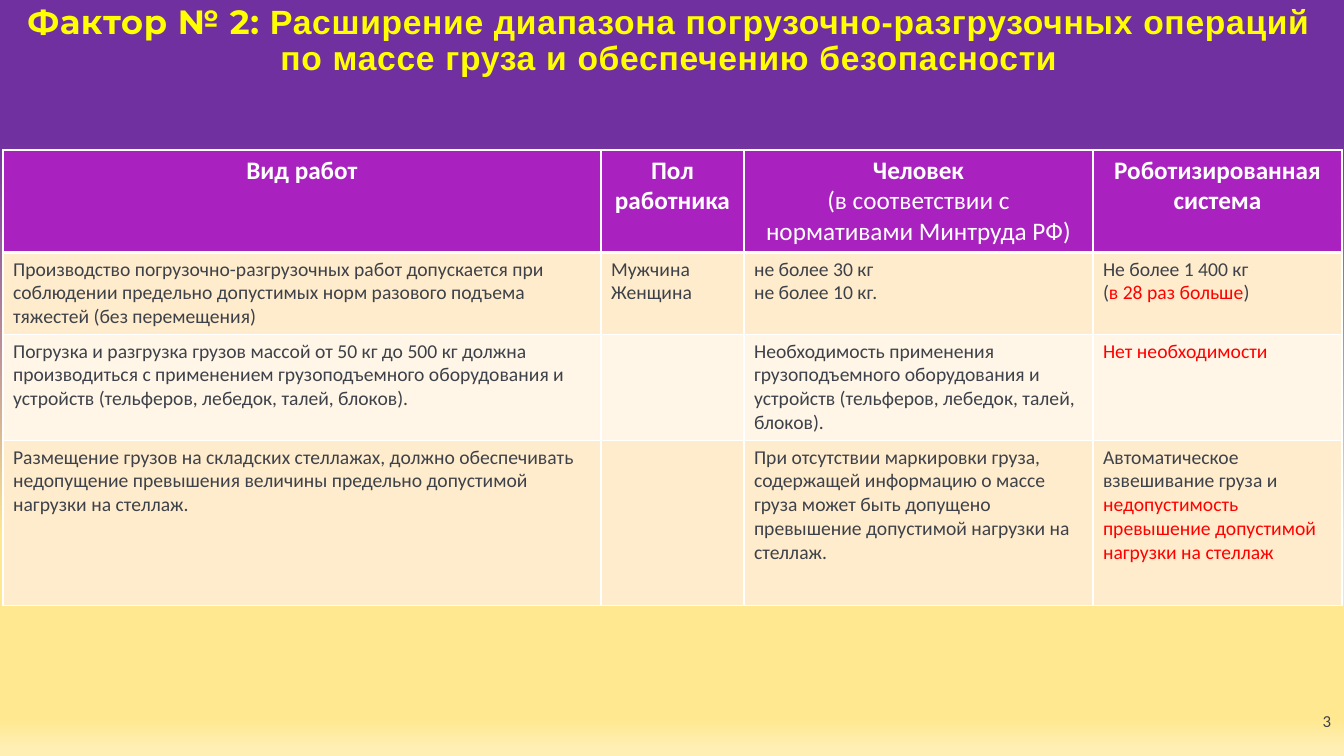
"""Build the slide comparing manual and robotic cargo handling."""
from pptx import Presentation
from pptx import util as u
from pptx.dml.color import RGBColor
from pptx.enum import text
from pptx.oxml import parse_xml
from pptx.oxml.ns import nsdecls, qn

TITLE = [
    ("Фактор № 2: ", "Montserrat"),
    ("Расширение диапазона погрузочно-разгрузочных операций по массе груза "
     "и обеспечению безопасности", "Arial"),
]
HEADER = [
    [[("Вид работ", "head")]],
    [[("Пол работника", "head")]],
    [[("Человек", "head")], [("(в соответствии с нормативами Минтруда РФ)", "note")]],
    [[("Роботизированная система", "head")]],
]
BODY = [
    [
        [[("Производство погрузочно-разгрузочных работ допускается при соблюдении "
           "предельно допустимых норм разового подъема тяжестей (без перемещения)", "body")]],
        [[("Мужчина", "body")], [("Женщина", "body")]],
        [[("не более 30 кг", "body")], [("не более 10 кг.", "body")]],
        [[("Не более 1 400 кг", "body")],
         [("(", "body"), ("в 28 раз больше", "accent"), (")", "body")]],
    ],
    [
        [[("Погрузка и разгрузка грузов массой от 50 кг до 500 кг должна производиться "
           "с применением грузоподъемного оборудования и устройств "
           "(тельферов, лебедок, талей, блоков).", "body")]],
        [],
        [[("Необходимость применения грузоподъемного оборудования и устройств "
           "(тельферов, лебедок, талей, блоков).", "body")]],
        [[("Нет необходимости", "accent")]],
    ],
    [
        [[("Размещение грузов на складских стеллажах, должно обеспечивать недопущение "
           "превышения величины предельно допустимой нагрузки на стеллаж.", "body")]],
        [],
        [[("При отсутствии маркировки груза, содержащей информацию о массе груза может быть "
           "допущено превышение допустимой нагрузки на стеллаж.", "body")]],
        [[("Автоматическое взвешивание груза и ", "body"),
          ("недопустимость превышение допустимой нагрузки на стеллаж", "accent")]],
    ],
]
PAGE = "3"
COLORS = {"title": "FFFF00", "white": "FFFFFF", "text": "3D4149", "red": "FF0000",
          "head": "A922C0", "odd": "FFECCC", "even": "FFF6E7"}
STYLES = {
    "head": {"size": 18, "color": "white", "bold": True},
    "note": {"size": 18, "color": "white"},
    "body": {"size": 14, "color": "text"},
    "accent": {"size": 14, "color": "red"},
}
BACKGROUND = [(18, "7030A0"), (71, "FFE88F"), (95, "FFE88F"), (99, "FFEFB4")]
COLS = [598, 143, 349, 249]
ROWS = [101, 82, 106, 165]
SCALE = 914400 / 100.8


def px(n):
    return u.Emu(round(n * SCALE))


def add_run(p, words, size=14, color="text", bold=False, font="Calibri"):
    r = p.add_run()
    r.text = words
    r.font.size, r.font.bold, r.font.name = u.Pt(size), bold, font
    r.font.color.rgb = RGBColor.from_string(COLORS[color])
    return r


def set_background(s):
    fill = s.background.fill
    fill.gradient()
    fill.gradient_angle = 270
    stops = s._element.find(".//" + qn("a:gsLst"))
    for gs in list(stops):
        stops.remove(gs)
    for pos, color in BACKGROUND:
        stops.append(parse_xml(f'<a:gs {nsdecls("a")} pos="{pos * 1000}">'
                               f'<a:srgbClr val="{color}"/></a:gs>'))


def add_title(s):
    sp = s.shapes.title
    sp.left, sp.top, sp.width, sp.height = px(-1), px(0), px(1340), px(150)
    tf = sp.text_frame
    tf.word_wrap = True
    tf.auto_size = text.MSO_AUTO_SIZE.NONE
    tf.vertical_anchor = text.MSO_ANCHOR.TOP
    p = tf.paragraphs[0]
    p.alignment, p.line_spacing = text.PP_ALIGN.CENTER, 0.9
    p.space_before = u.Pt(0)
    for words, font in TITLE:
        rpr = add_run(p, words, 24, "title", True, font)._r.rPr
        rpr.set("spc", "50")
        rpr.find(qn("a:solidFill")).addnext(parse_xml(
            f'<a:effectLst {nsdecls("a")}><a:outerShdw blurRad="38100" dist="38100" dir="2700000">'
            '<a:srgbClr val="000000"><a:alpha val="43000"/></a:srgbClr>'
            '</a:outerShdw></a:effectLst>'))


def set_borders(cell, top, bottom):
    tcpr = cell._tc.get_or_add_tcPr()
    for i, (side, width) in enumerate([("L", 1), ("R", 1), ("T", top), ("B", bottom)]):
        tcpr.insert(i, parse_xml(
            f'<a:ln{side} {nsdecls("a")} w="{u.Pt(width)}"><a:solidFill>'
            f'<a:srgbClr val="{COLORS["white"]}"/></a:solidFill></a:ln{side}>'))


def add_comparison(s):
    tbl = s.shapes.add_table(len(ROWS), len(COLS), px(3), px(150),
                             px(sum(COLS)), px(sum(ROWS))).table
    for col, width in zip(tbl.columns, COLS):
        col.width = px(width)
    for i, cells in enumerate([HEADER] + BODY):
        tbl.rows[i].height = px(ROWS[i])
        fill = "head" if i == 0 else "odd" if i % 2 else "even"
        for j, paragraphs in enumerate(cells):
            cell = tbl.cell(i, j)
            cell.fill.solid()
            cell.fill.fore_color.rgb = RGBColor.from_string(COLORS[fill])
            set_borders(cell, 3 if i == 1 else 1, 3 if i == 0 else 1)
            tf = cell.text_frame
            for k, runs in enumerate(paragraphs):
                p = tf.add_paragraph() if k else tf.paragraphs[0]
                p.alignment = text.PP_ALIGN.LEFT if i else text.PP_ALIGN.CENTER
                for words, style in runs:
                    add_run(p, words, **STYLES[style])


def add_page_number(s):
    tf = s.shapes.add_textbox(px(1039), px(701), px(302), px(40)).text_frame
    tf.word_wrap = True
    tf.vertical_anchor = text.MSO_ANCHOR.MIDDLE
    p = tf.paragraphs[0]
    p.alignment = text.PP_ALIGN.RIGHT
    add_run(p, PAGE, size=12)


def main():
    prs = Presentation()
    prs.slide_width, prs.slide_height = px(1344), px(756)
    s = prs.slides.add_slide(prs.slide_layouts[5])
    set_background(s)
    add_title(s)
    add_comparison(s)
    add_page_number(s)
    prs.save("out.pptx")


if __name__ == "__main__":
    main()
